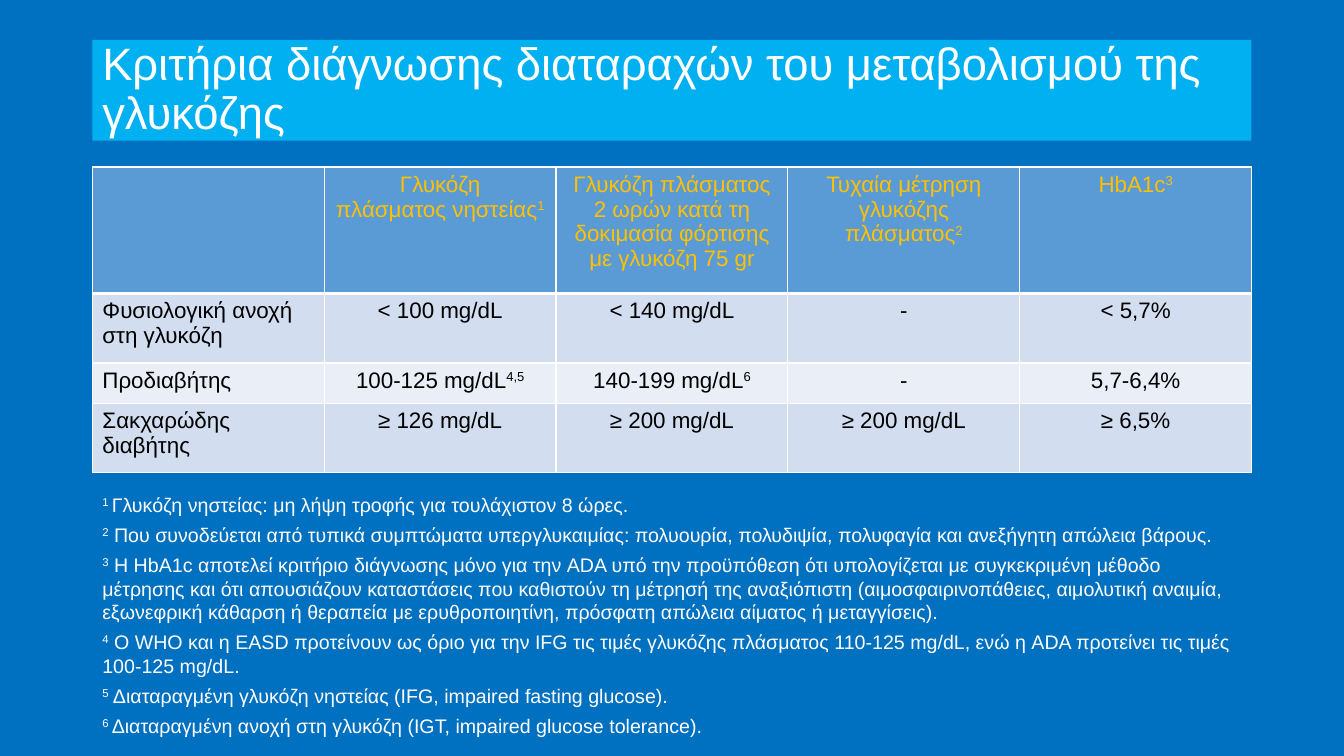
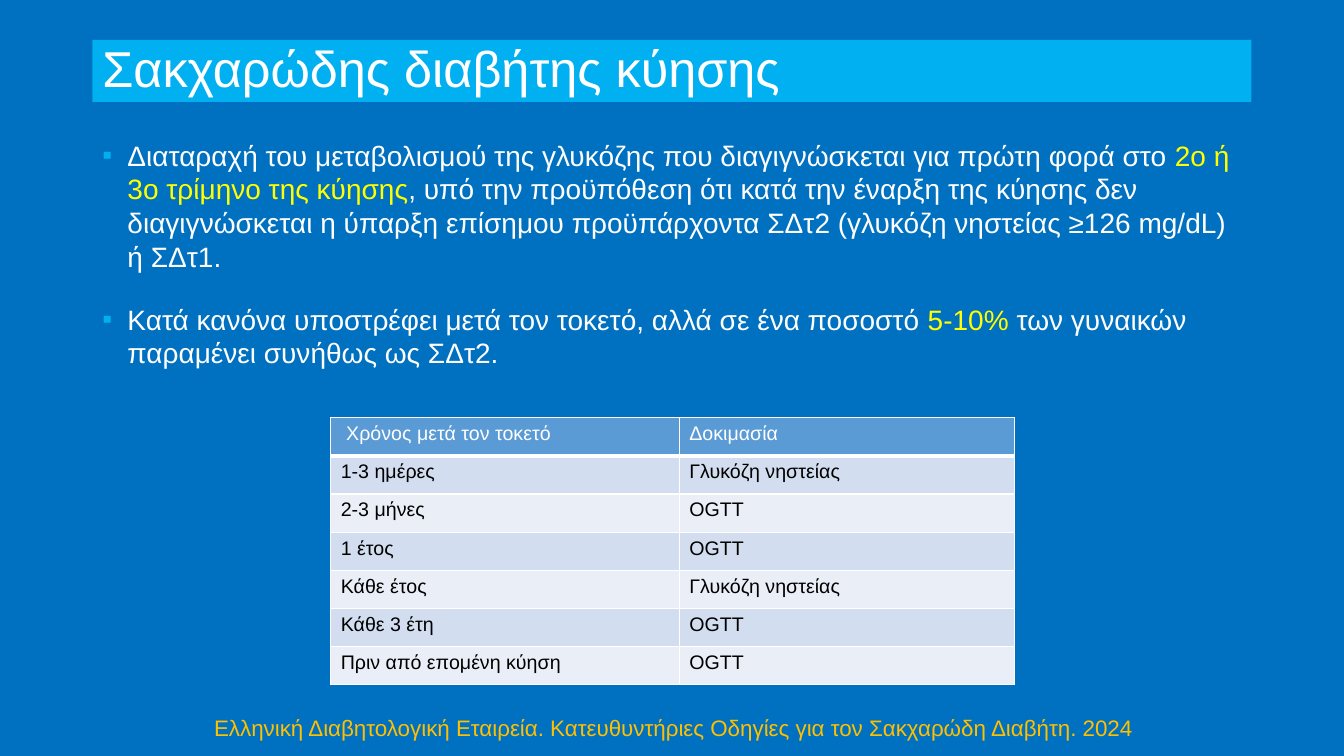
import pptx
import pptx.dml.color
import pptx.enum.shapes
import pptx.enum.text
import pptx.oxml
import pptx.oxml.ns
import pptx.util

PX = 9525
FONT = "Arial"
COLORS = {
    "background": "0070C0",
    "band": "00B0F0",
    "header": "5B9BD5",
    "odd_row": "D2DEEF",
    "even_row": "EAEFF7",
    "white": "FFFFFF",
    "black": "000000",
    "gold": "FFC000",
    "yellow": "FFFF00",
}
LEFT, WIDTH = 88, 1104
CENTER = pptx.enum.text.PP_ALIGN.CENTER
START = pptx.enum.text.PP_ALIGN.LEFT

CRITERIA = [
    ["", "Γλυκόζη\nπλάσματος νηστείας|1",
     "Γλυκόζη πλάσματος 2 ωρών κατά τη δοκιμασία φόρτισης με γλυκόζη 75 gr",
     "Τυχαία μέτρηση γλυκόζης πλάσματος|2", "HbA1c|3"],
    ["Φυσιολογική ανοχή στη γλυκόζη", "< 100 mg/dL", "< 140 mg/dL", "-", "< 5,7%"],
    ["Προδιαβήτης", "100-125 mg/dL|4,5", "140-199 mg/dL|6", "-", "5,7-6,4%"],
    ["Σακχαρώδης διαβήτης", "≥ 126 mg/dL", "≥ 200 mg/dL", "≥ 200 mg/dL", "≥ 6,5%"],
]
FOOTNOTES = [
    "|1 |Γλυκόζη νηστείας: μη λήψη τροφής για τουλάχιστον 8 ώρες.",
    "|2| Που συνοδεύεται από τυπικά συμπτώματα υπεργλυκαιμίας: πολυουρία, πολυδιψία, "
    "πολυφαγία και ανεξήγητη απώλεια βάρους.",
    "|3| Η HbA1c αποτελεί κριτήριο διάγνωσης μόνο για την ADA υπό την προϋπόθεση ότι "
    "υπολογίζεται με συγκεκριμένη μέθοδο μέτρησης και ότι απουσιάζουν καταστάσεις που "
    "καθιστούν τη μέτρησή της αναξιόπιστη (αιμοσφαιρινοπάθειες, αιμολυτική αναιμία, "
    "εξωνεφρική κάθαρση ή θεραπεία με ερυθροποιητίνη, πρόσφατη απώλεια αίματος ή "
    "μεταγγίσεις).",
    "|4| Ο WHO και η EASD προτείνουν ως όριο για την IFG τις τιμές γλυκόζης πλάσματος "
    "110-125 mg/dL, ενώ η ADA προτείνει τις τιμές 100-125 mg/dL.",
    "|5| Διαταραγμένη γλυκόζη νηστείας (IFG, impaired fasting glucose).",
    "|6 |Διαταραγμένη ανοχή στη γλυκόζη (IGT, impaired glucose tolerance).",
]
GESTATIONAL_POINTS = [
    "Διαταραχή του μεταβολισμού της γλυκόζης που διαγιγνώσκεται για πρώτη φορά στο "
    "|2ο ή 3ο τρίμηνο της κύησης|, υπό την προϋπόθεση ότι κατά την έναρξη της κύησης δεν "
    "διαγιγνώσκεται η ύπαρξη επίσημου προϋπάρχοντα ΣΔτ2 (γλυκόζη νηστείας ≥126 mg/dL) "
    "ή ΣΔτ1.",
    "Κατά κανόνα υποστρέφει μετά τον τοκετό, αλλά σε ένα ποσοστό |5-10% |των γυναικών "
    "παραμένει συνήθως ως ΣΔτ2.",
]
FOLLOW_UP = [
    [" Χρόνος μετά τον τοκετό", "Δοκιμασία"],
    ["1-3 ημέρες", "Γλυκόζη νηστείας"],
    ["2-3 μήνες", "OGTT"],
    ["1 έτος", "OGTT"],
    ["Κάθε έτος", "Γλυκόζη νηστείας"],
    ["Κάθε 3 έτη", "OGTT"],
    ["Πριν από επομένη κύηση", "OGTT"],
]


def rgb(name):
    """Return the named colour."""
    return pptx.dml.color.RGBColor.from_string(COLORS[name])


def emu(box):
    """Turn a box in px into EMU."""
    return [pptx.util.Emu(length * PX) for length in box]


def raise_run(run):
    """Make a run superscript."""
    run._r.get_or_add_rPr().set("baseline", "30000")


def highlight_run(run):
    """Colour a run yellow."""
    run.font.color.rgb = rgb("yellow")


def add_bullet(paragraph):
    """Give a paragraph a square bullet and a hanging indent."""
    properties = paragraph._p.get_or_add_pPr()
    properties.set("marL", str(24 * PX))
    properties.set("indent", str(-24 * PX))
    namespace = pptx.oxml.ns.nsdecls("a")
    for xml in (
        f'<a:buClr {namespace}><a:srgbClr val="{COLORS["band"]}"/></a:buClr>',
        f'<a:buFont {namespace} typeface="{FONT}"/>',
        f'<a:buChar {namespace} char="▪"/>',
    ):
        properties.append(pptx.oxml.parse_xml(xml))


def write(frame, texts, size, color, align=START, gap=0, mark=raise_run, bullets=False):
    """Fill a text frame; every second piece between bars is marked."""
    frame.word_wrap = True
    for index, text in enumerate(texts):
        paragraph = frame.paragraphs[0] if index == 0 else frame.add_paragraph()
        paragraph.alignment = align
        if index and gap:
            paragraph.space_before = pptx.util.Pt(gap)
        if bullets:
            add_bullet(paragraph)
        paragraph.font.name = FONT
        paragraph.font.size = pptx.util.Pt(size)
        paragraph.font.color.rgb = rgb(color)
        for position, piece in enumerate(text.split("|")):
            if piece:
                run = paragraph.add_run()
                run.text = piece
                if position % 2:
                    mark(run)


def add_text(slide, box, texts, size, color, **style):
    """Place a text box."""
    write(slide.shapes.add_textbox(*emu(box)).text_frame, texts, size, color, **style)


def add_title(slide, box, title, size):
    """Place the title on its light band."""
    band = slide.shapes.add_shape(pptx.enum.shapes.MSO_SHAPE.RECTANGLE, *emu(box))
    band.shadow.inherit = False
    band.fill.solid()
    band.fill.fore_color.rgb = rgb("band")
    band.line.fill.background()
    band.text_frame.vertical_anchor = pptx.enum.text.MSO_ANCHOR.MIDDLE
    write(band.text_frame, [title], size, "white")
    band.text_frame.paragraphs[0].line_spacing = 0.9


def add_borders(cell, top, bottom):
    """Draw white borders round a cell, with widths in points."""
    properties = cell._tc.get_or_add_tcPr()
    widths = {"lnL": 1, "lnR": 1, "lnT": top, "lnB": bottom}
    for index, (side, width) in enumerate(widths.items()):
        properties.insert(index, pptx.oxml.parse_xml(
            f'<a:{side} {pptx.oxml.ns.nsdecls("a")} w="{pptx.util.Pt(width)}">'
            f'<a:solidFill><a:srgbClr val="{COLORS["white"]}"/></a:solidFill></a:{side}>'))


def add_banded_table(slide, box, rows, column_shares, row_shares, size, header_color,
                     value_align=START):
    """Place a banded table whose columns and rows share out the box."""
    table = slide.shapes.add_table(len(rows), len(rows[0]), *emu(box)).table
    table.first_row = table.horz_banding = False
    for column, share in zip(table.columns, column_shares):
        column.width = pptx.util.Emu(box[2] * PX * share // sum(column_shares))
    for row, share in zip(table.rows, row_shares):
        row.height = pptx.util.Emu(box[3] * PX * share // sum(row_shares))
    for row_index, row in enumerate(rows):
        band = "odd_row" if row_index % 2 else "even_row"
        for column_index, text in enumerate(row):
            cell = table.cell(row_index, column_index)
            cell.fill.solid()
            cell.fill.fore_color.rgb = rgb(band if row_index else "header")
            add_borders(cell, 3 if row_index == 1 else 1, 1 if row_index else 3)
            write(cell.text_frame, text.split("\n"), size,
                  "black" if row_index else header_color,
                  align=value_align if column_index else START)


def new_slide(deck, title, title_height, title_size):
    """Add a blue slide with its title."""
    slide = deck.slides.add_slide(deck.slide_layouts[6])
    slide.background.fill.solid()
    slide.background.fill.fore_color.rgb = rgb("background")
    add_title(slide, (LEFT, 38, WIDTH, title_height), title, title_size)
    return slide


def criteria_slide(deck):
    """Build the slide of diagnostic criteria."""
    slide = new_slide(
        deck, "Κριτήρια διάγνωσης διαταραχών του μεταβολισμού της γλυκόζης", 96, 32.4)
    add_banded_table(slide, (LEFT, 159, WIDTH, 291), CRITERIA, [1] * 5,
                     [126, 69, 40, 69], 16, "gold", CENTER)
    add_text(slide, (LEFT, 465, WIDTH, 246), FOOTNOTES, 14, "white", gap=4.6)


def gestational_slide(deck):
    """Build the slide on gestational diabetes."""
    slide = new_slide(deck, "Σακχαρώδης διαβήτης κύησης", 59, 36)
    add_text(slide, (LEFT, 127, WIDTH, 233), GESTATIONAL_POINTS, 20, "white",
             gap=21, mark=highlight_run, bullets=True)
    add_banded_table(slide, (315, 398, 651, 254), FOLLOW_UP, [332, 319],
                     [1] * len(FOLLOW_UP), 14, "white")
    add_text(slide, (188, 675, 907, 35),
             ["Ελληνική Διαβητολογική Εταιρεία. Κατευθυντήριες Οδηγίες για τον "
              "Σακχαρώδη Διαβήτη. 2024"], 16, "gold", align=CENTER)


def main():
    """Build and save the deck."""
    deck = pptx.Presentation()
    deck.slide_width, deck.slide_height = emu((1280, 720))
    criteria_slide(deck)
    gestational_slide(deck)
    deck.save("out.pptx")


if __name__ == "__main__":
    main()
